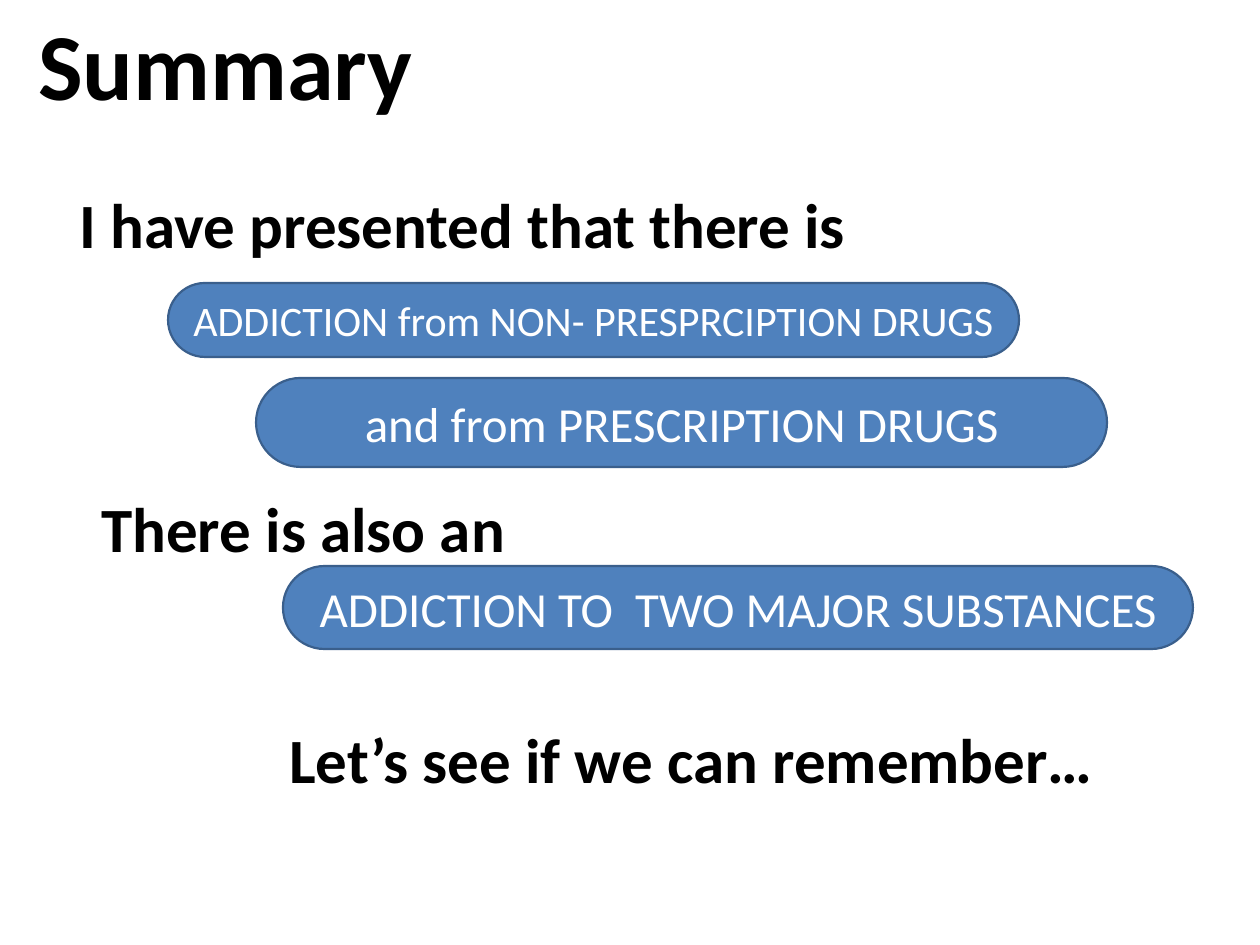
from dataclasses import dataclass

from pptx import Presentation
from pptx.dml.color import RGBColor
from pptx.enum.shapes import MSO_SHAPE
from pptx.enum.text import MSO_ANCHOR, MSO_AUTO_SIZE, PP_ALIGN
from pptx.util import Emu, Pt

ROUNDED = MSO_SHAPE.ROUNDED_RECTANGLE
MIDDLE = MSO_ANCHOR.MIDDLE
CENTER = PP_ALIGN.CENTER
FIT_SHAPE = MSO_AUTO_SIZE.SHAPE_TO_FIT_TEXT
BLANK = 6
SCALE = 914400 / 126  # EMU in one px


def px(n):
    return Emu(round(n * SCALE))


@dataclass(frozen=True)
class Theme:
    font: str = "Calibri"
    ink: RGBColor = RGBColor(0x00, 0x00, 0x00)
    paper: RGBColor = RGBColor(0xFF, 0xFF, 0xFF)
    fill: RGBColor = RGBColor(0x4F, 0x81, 0xBD)
    edge: RGBColor = RGBColor(0x3A, 0x5F, 0x8C)
    edge_width: float = 1.25
    title: int = 54
    heading: int = 36
    pill: int = 28
    pill_small: int = 24


class Deck:
    def __init__(self, theme, w, h):
        self.theme = theme
        self.prs = Presentation()
        self.prs.slide_width, self.prs.slide_height = px(w), px(h)
        self.s = self.prs.slides.add_slide(self.prs.slide_layouts[BLANK])

    def add_text(self, tf, text, size, color, bold=False):
        p = tf.paragraphs[0]
        r = p.add_run()
        r.text = text
        formats = {"name": self.theme.font, "size": Pt(size), "bold": bold}
        for name, value in formats.items():
            setattr(r.font, name, value)
        r.font.color.rgb = color
        return p

    def label(self, box, text, size, wrap=False):
        tf = self.s.shapes.add_textbox(*map(px, box)).text_frame
        for name, value in {"word_wrap": wrap, "auto_size": FIT_SHAPE}.items():
            setattr(tf, name, value)
        self.add_text(tf, text, size, self.theme.ink, bold=True)

    def pill(self, box, text, size):
        sp = self.s.shapes.add_shape(ROUNDED, *map(px, box))
        sp.adjustments[0] = 0.5
        sp.shadow.inherit = False
        sp.fill.solid()
        sp.fill.fore_color.rgb = self.theme.fill
        sp.line.color.rgb = self.theme.edge
        sp.line.width = Pt(self.theme.edge_width)
        tf = sp.text_frame
        for name, value in {"word_wrap": True, "vertical_anchor": MIDDLE}.items():
            setattr(tf, name, value)
        self.add_text(tf, text, size, self.theme.paper).alignment = CENTER


def main():
    theme = Theme()
    deck = Deck(theme, 1260, 945)

    # Title
    deck.label((26, 0, 425, 127), "Summary", theme.title)

    # Addiction to drugs
    deck.label((67, 179, 814, 89), "I have presented that there is", theme.heading)
    deck.pill((168, 283, 851, 74), "ADDICTION from NON- PRESPRCIPTION DRUGS",
              theme.pill_small)
    deck.pill((256, 378, 851, 89), "and from PRESCRIPTION DRUGS", theme.pill)

    # Addiction to substances
    deck.label((89, 483, 433, 89), "There is also an", theme.heading)
    deck.pill((283, 566, 910, 83), "ADDICTION TO  TWO MAJOR SUBSTANCES", theme.pill)

    # Closing line
    deck.label((277, 714, 832, 89), "Let’s see if we can remember…",
               theme.heading, wrap=True)

    deck.prs.save("out.pptx")


if __name__ == "__main__":
    main()
